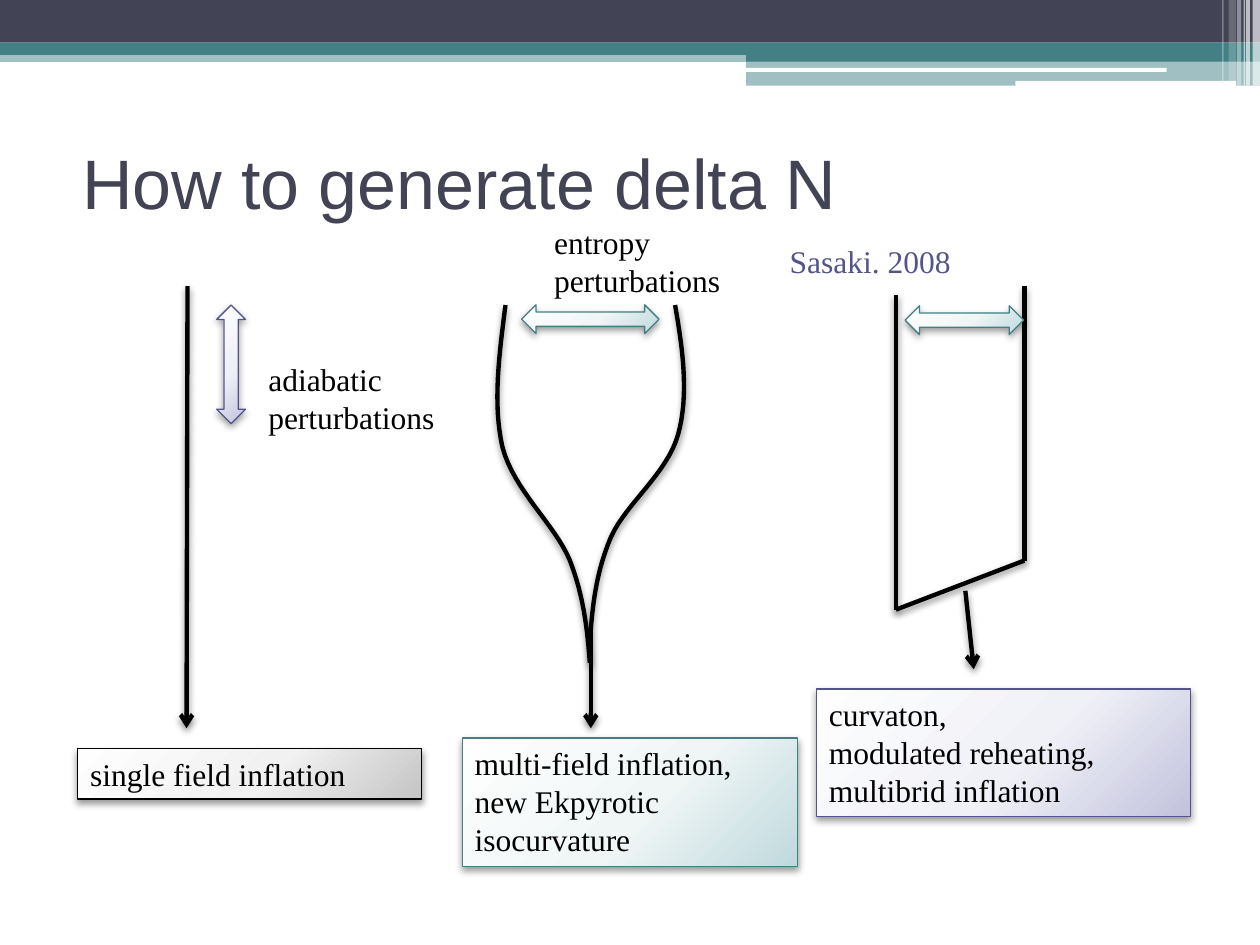
from lxml import etree
from pptx import Presentation, util as u
from pptx.dml.color import RGBColor
from pptx.enum import shapes as sh, text as tx
from pptx.oxml import parse_xml
from pptx.oxml.ns import qn

THEME = {
    "ink": "000000", "dark": "424456", "teal": "438086", "plum": "53548A",
    "white": "FFFFFF", "head": "Arial", "body": "Times New Roman",
    "big": 40, "size": 18, "thin": 0.75, "thick": 2.5,
    "fade": {
        "ink": ("FEFEFE", "F1F1F1", "C5C5C5"),
        "teal": ("FEFEFE", "F0F6F6", "BFD9DD"),
        "plum": ("FEFEFE", "F0F1F7", "C2C2DD"),
    },
}
KIND = sh.MSO_SHAPE
TITLE = ("How to generate delta N", (1.4, 2.18, 22.86, 2.97))

BANDS = [
    ((0, 1.02, 25.4, 0.23), "teal", 50, KIND.RECTANGLE),
    ((0, 0, 25.4, 0.86), "dark", 100, KIND.RECTANGLE),
    ((0, 0.86, 25.4, 0.25), "teal", 100, KIND.RECTANGLE),
    ((15.04, 0.99, 10.36, 0.25), "teal", 100, KIND.RECTANGLE),
    ((15.04, 1.22, 10.36, 0.51), "teal", 50, KIND.RECTANGLE),
    ((15.01, 1.37, 8.51, 0.08), "white", 100, KIND.ROUNDED_RECTANGLE),
    ((20.47, 1.63, 4.45, 0.1), "white", 100, KIND.ROUNDED_RECTANGLE),
]
STRIPES = [
    (25.25, 0.15, 1.73, 65), (25.12, 0.08, 1.73, 65), (25.07, 0.03, 1.73, 60),
    (24.94, 0.08, 1.73, 40), (24.77, 0.15, 1.63, 20), (24.64, 0.03, 1.63, 30),
]
BOXES = [
    (["single field inflation"], (1.57, 15.09, 6.93, 1.02), "ink"),
    (["multi-field inflation, new Ekpyrotic", "isocurvature"],
     (9.32, 14.88, 6.76, 2.59), "teal"),
    (["curvaton,", "modulated reheating,", "multibrid inflation"],
     (16.46, 13.89, 7.54, 2.57), "plum"),
]
ARROWS = [
    ((4.37, 6.15, 0.58, 2.39), 0, "plum"),
    ((11.61, 5.05, 0.58, 2.77), 90, "teal"),
    ((19.15, 5.26, 0.58, 2.39), 90, "teal"),
]
LINES = [
    ((3.78, 5.77), (3.76, 14.68), True),
    ((11.91, 12.7), (11.91, 14.68), True),
    ((18.06, 5.94), (18.06, 12.29), False),
    ((20.65, 5.77), (20.65, 11.3), False),
    ((18.06, 12.29), (20.65, 11.3), False),
    ((19.46, 11.91), (19.63, 13.49), True),
]
CURVES = [
    [(10.19, 6.15), (10.06, 7.16), (9.93, 8.15), (10.13, 9.02), (10.36, 9.88),
     (11.18, 10.57), (11.48, 11.28), (11.76, 11.99), (11.84, 12.67), (11.89, 13.36)],
    [(13.61, 6.15), (13.77, 7.06), (13.89, 7.98), (13.67, 8.76), (13.46, 9.53),
     (12.62, 10.16), (12.32, 10.82), (12.04, 11.48), (11.96, 12.09), (11.91, 12.7)],
]
LABELS = [
    (["adiabatic", "perturbations"], (5.16, 7.14, 4.95, 1.8), "ink"),
    (["entropy", "perturbations"], (10.92, 4.37, 4.95, 1.8), "ink"),
    (["Sasaki. 2008"], (15.67, 4.75, 7.75, 1.02), "plum"),
]
STEPS = 16
NS = 'xmlns:a="http://schemas.openxmlformats.org/drawingml/2006/main"'


def cms(vals):
    return [u.Cm(v) for v in vals]


def hue(name):
    return RGBColor.from_string(THEME[name])


def props(item):
    return item._element.spPr


def write(frame, rows, font, size, tint):
    frame.word_wrap = True
    for i, row in enumerate(rows):
        para = frame.paragraphs[0] if i == 0 else frame.add_paragraph()
        para.alignment = tx.PP_ALIGN.LEFT
        run = para.add_run()
        run.text = row
        run.font.name, run.font.size = font, u.Pt(size)
        run.font.color.rgb = hue(tint)


def note(frame, rows, tint):
    write(frame, rows, THEME["body"], THEME["size"], tint)
    frame.vertical_anchor = tx.MSO_ANCHOR.TOP
    frame.auto_size = tx.MSO_AUTO_SIZE.SHAPE_TO_FIT_TEXT


def shade(item, alpha, blur):
    for old in props(item).findall(qn("a:effectLst")):
        props(item).remove(old)
    props(item).append(parse_xml(
        f'<a:effectLst {NS}><a:outerShdw blurRad="{u.Pt(blur)}" dist="{u.Pt(2)}" '
        f'dir="5400000" rotWithShape="0"><a:srgbClr val="{THEME["ink"]}">'
        f'<a:alpha val="{alpha * 1000}"/></a:srgbClr></a:outerShdw></a:effectLst>'))


def stroke(item):
    item.line.color.rgb = hue("ink")
    item.line.width = u.Pt(THEME["thick"])
    shade(item, 45, 4)


def band(slide, box, tint, alpha, kind):
    item = slide.shapes.add_shape(kind, *cms(box))
    item.shadow.inherit = False
    item.fill.solid()
    item.fill.fore_color.rgb = hue(tint)
    item.line.fill.background()
    if alpha < 100:
        color = props(item).find(qn("a:solidFill"))[0]
        etree.SubElement(color, qn("a:alpha")).set("val", str(alpha * 1000))


def glow(slide, kind, box, tint):
    item = slide.shapes.add_shape(kind, *cms(box))
    item.fill.solid()
    stops = "".join(
        f'<a:gs pos="{pos * 1000}"><a:srgbClr val="{val}"/></a:gs>'
        for pos, val in zip((0, 55, 100), THEME["fade"][tint]))
    flat = props(item).find(qn("a:solidFill"))
    props(item).replace(flat, parse_xml(
        f'<a:gradFill {NS} rotWithShape="1"><a:gsLst>{stops}</a:gsLst>'
        '<a:path path="circle"><a:fillToRect l="-40000" t="-90000" '
        'r="140000" b="190000"/></a:path></a:gradFill>'))
    item.line.color.rgb = hue(tint)
    item.line.width = u.Pt(THEME["thin"])
    shade(item, 40, 4.1)
    return item


def link(slide, start, end, tip):
    item = slide.shapes.add_connector(sh.MSO_CONNECTOR.STRAIGHT, *cms(start + end))
    stroke(item)
    if tip:
        line = props(item).find(qn("a:ln"))
        etree.SubElement(line, qn("a:tailEnd")).set("type", "arrow")


def curve(slide, pts):
    trail = []
    for i in range(0, len(pts) - 1, 3):
        for step in range(1, STEPS + 1):
            t = step / STEPS
            mix = ((1 - t) ** 3, 3 * t * (1 - t) ** 2, 3 * t * t * (1 - t), t ** 3)
            trail.append(cms(sum(m * p[k] for m, p in zip(mix, pts[i:i + 4]))
                             for k in (0, 1)))
    form = slide.shapes.build_freeform(*cms(pts[0]))
    form.add_line_segments(trail, close=False)
    item = form.convert_to_shape()
    item.fill.background()
    stroke(item)


def main():
    deck = Presentation()
    deck.slide_width, deck.slide_height = cms((25.4, 19.05))
    slide = deck.slides.add_slide(deck.slide_layouts[5])
    for row in BANDS:
        band(slide, *row)
    for left, wide, high, alpha in STRIPES:
        band(slide, (left, 0, wide, high), "white", alpha, KIND.RECTANGLE)

    head = slide.shapes.title
    head.left, head.top, head.width, head.height = cms(TITLE[1])
    write(head.text_frame, [TITLE[0]], THEME["head"], THEME["big"], "dark")
    head.text_frame.vertical_anchor = tx.MSO_ANCHOR.MIDDLE

    for rows, box, tint in BOXES:
        note(glow(slide, KIND.RECTANGLE, box, tint).text_frame, rows, "ink")
    for row in LINES:
        link(slide, *row)
    for pts in CURVES:
        curve(slide, pts)
    for box, turn, tint in ARROWS:
        glow(slide, KIND.UP_DOWN_ARROW, box, tint).rotation = turn
    for rows, box, tint in LABELS:
        note(slide.shapes.add_textbox(*cms(box)).text_frame, rows, tint)
    deck.save("out.pptx")


if __name__ == "__main__":
    main()
